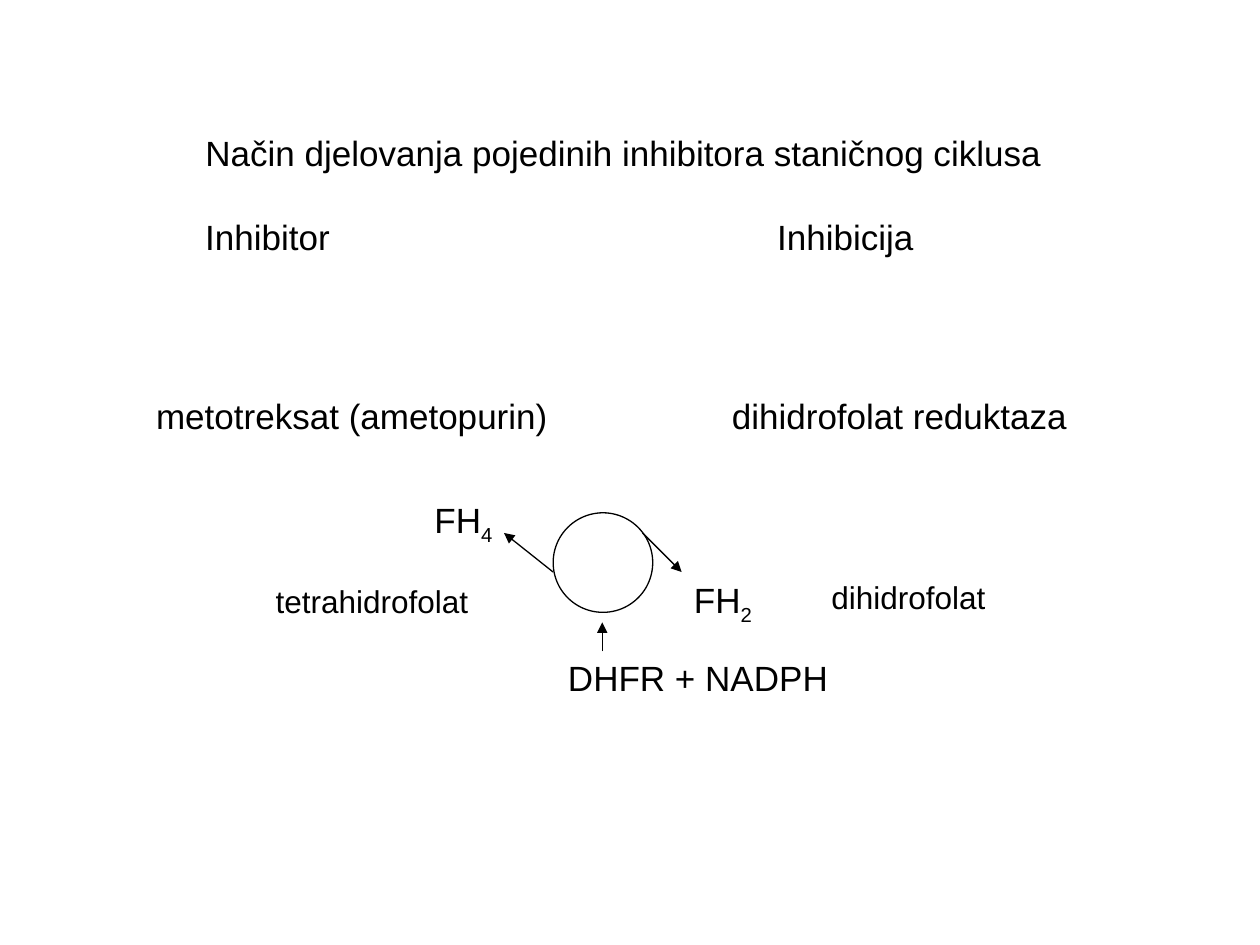
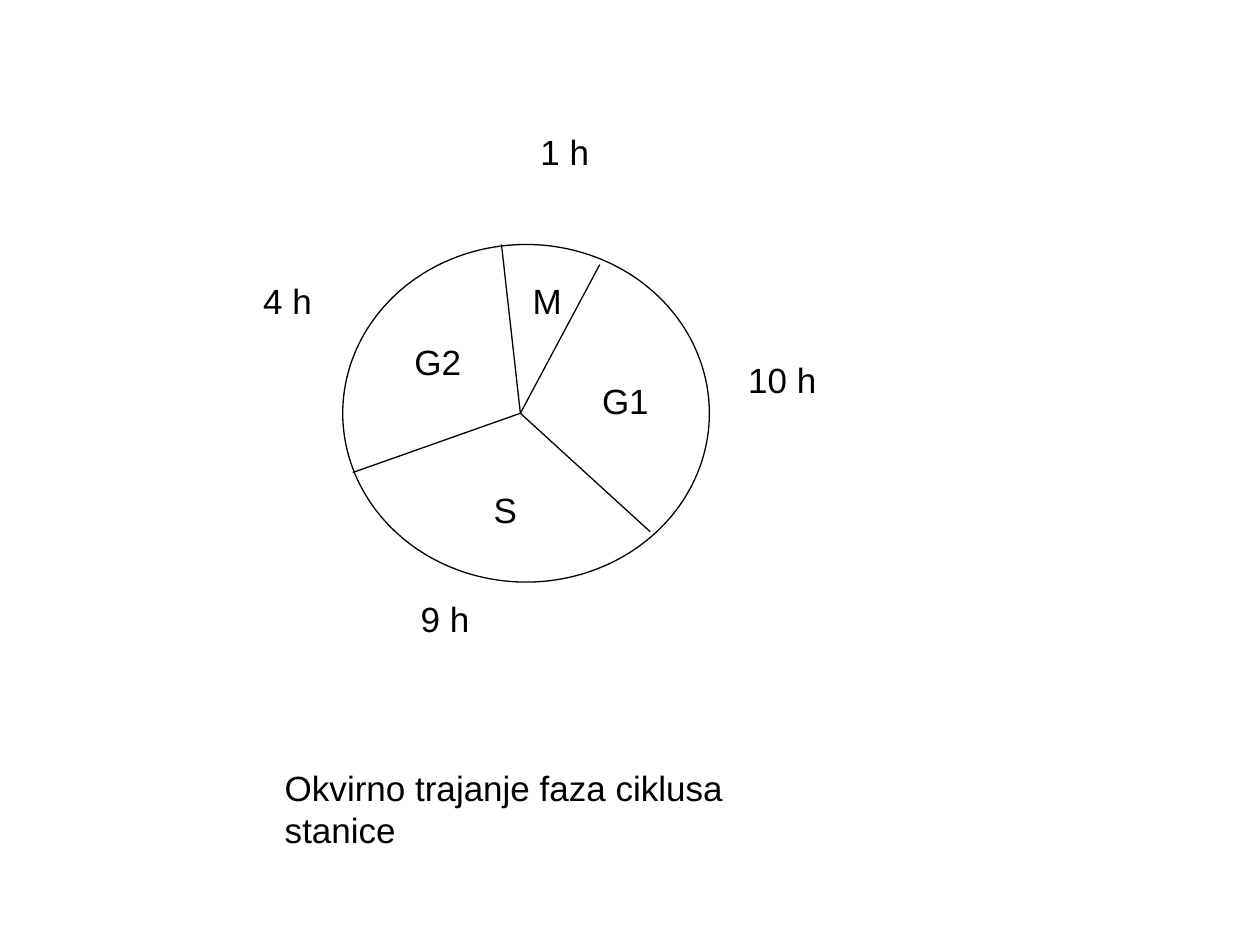
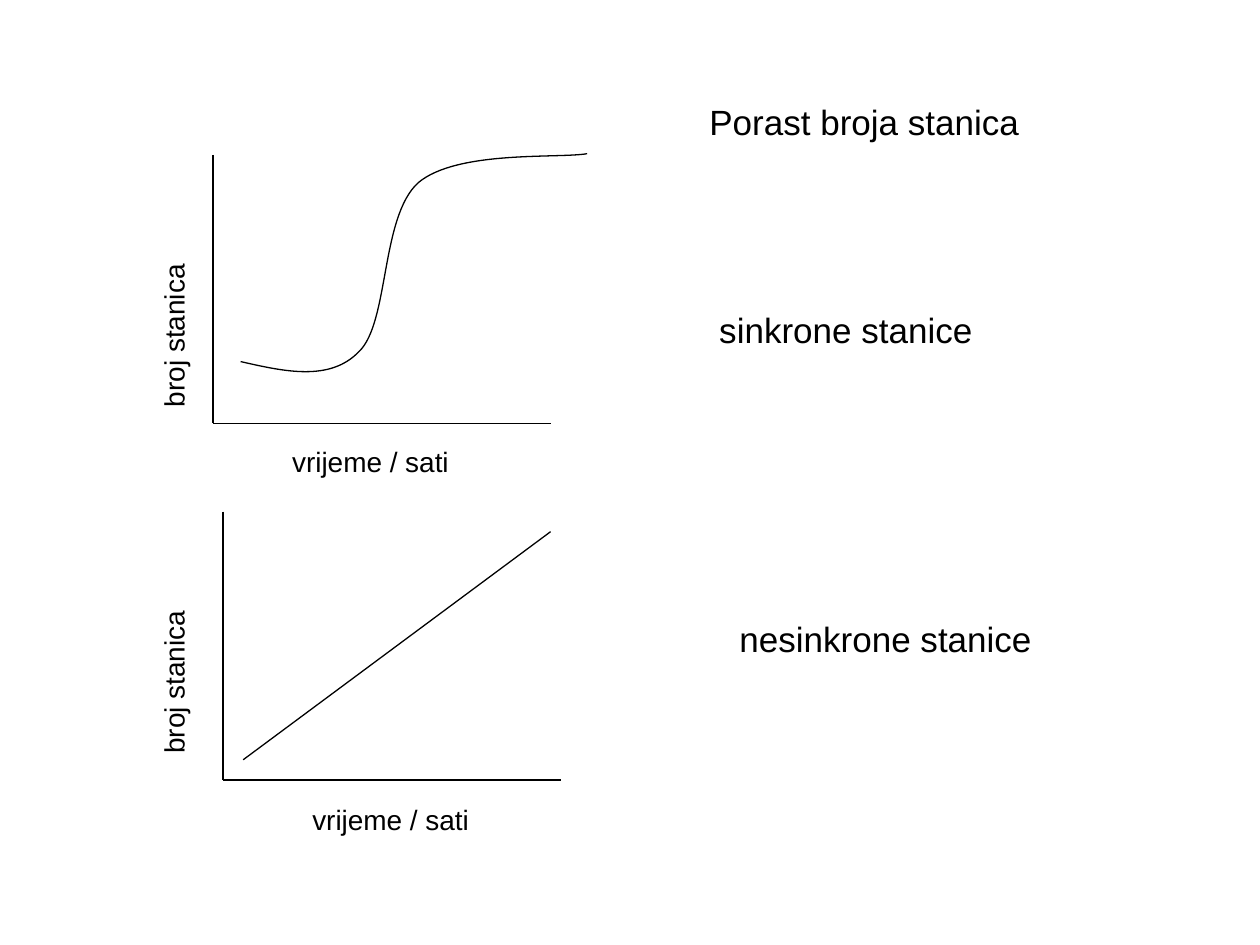
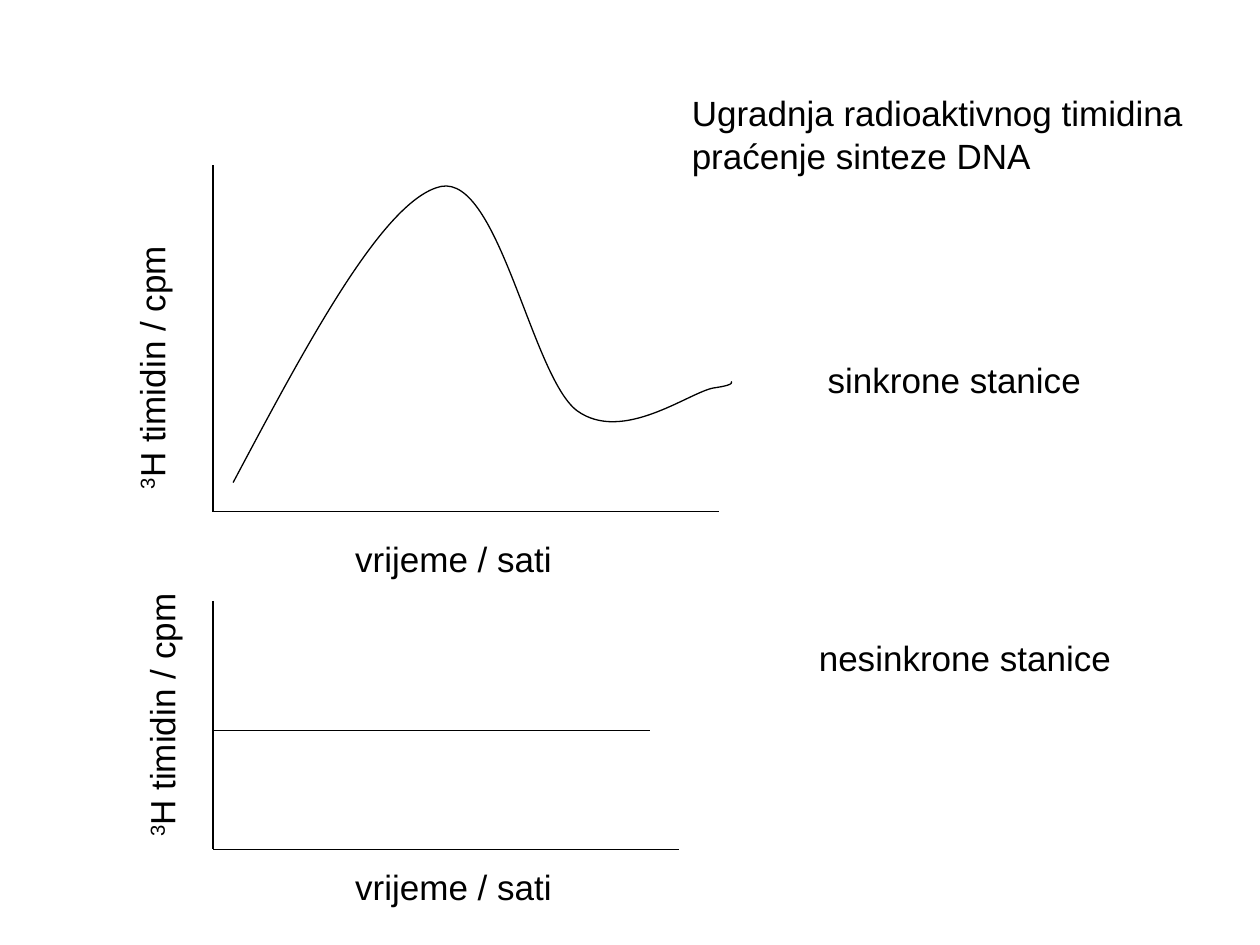
from dataclasses import dataclass

from lxml import etree
from pptx import Presentation
from pptx.dml.color import RGBColor
from pptx.enum.shapes import MSO_CONNECTOR, MSO_SHAPE
from pptx.enum.text import MSO_ANCHOR, MSO_AUTO_SIZE, PP_ALIGN
from pptx.oxml.ns import qn
from pptx.util import Inches, Pt

STRAIGHT = MSO_CONNECTOR.STRAIGHT
OVAL = MSO_SHAPE.OVAL
LEFT = PP_ALIGN.LEFT

SLIDE_W, SLIDE_H = Inches(10), Inches(7.5)
COL, ROW = SLIDE_W / 100, SLIDE_H / 75
TITLE_ONLY = 5
FONT = "Arial"
COLORS = {"ink": "000000", "paper": "FFFFFF"}
LINE_WIDTH = Pt(0.75)
BODY, NOTE, SMALL = 20, 18, 16
TEXT_ROWS = {BODY: 4.3, NOTE: 4, SMALL: 3.7}
FRAME_FORMAT = {"vertical_anchor": MSO_ANCHOR.TOP, "auto_size": MSO_AUTO_SIZE.NONE}
TIMIDIN = [("3", 30), ("H timidin / cpm", 0)]


@dataclass
class Box:
    """A region measured in grid columns and rows."""

    x: float
    y: float
    w: float
    h: float

    def inner(self, x, y, w=0, h=0):
        """Return a box offset from this one's corner."""
        return Box(self.x + x, self.y + y, w, h)

    def point(self, x, y):
        """Return the slide position of a point in this box."""
        return round((self.x + x) * COL), round((self.y + y) * ROW)

    def extent(self):
        """Return left, top, width and height on the slide."""
        return (*self.point(0, 0), round(self.w * COL), round(self.h * ROW))


def color(name):
    """Look up a shared colour."""
    return RGBColor.from_string(COLORS[name])


def write(frame, paragraphs, size=BODY, wrap=False):
    """Fill a frame with paragraphs given as text or (text, baseline) runs."""
    for attribute, value in {**FRAME_FORMAT, "word_wrap": wrap}.items():
        setattr(frame, attribute, value)
    for index, runs in enumerate(paragraphs):
        paragraph = frame.add_paragraph() if index else frame.paragraphs[0]
        paragraph.alignment = LEFT
        for words, baseline in [(runs, 0)] if isinstance(runs, str) else runs:
            run = paragraph.add_run()
            run.text = words
            for attribute, value in {"name": FONT, "size": Pt(size)}.items():
                setattr(run.font, attribute, value)
            run.font.color.rgb = color("ink")
            if baseline:
                run._r.get_or_add_rPr().set("baseline", str(baseline * 1000))


def label(slide, box, runs, size=BODY, wrap=False):
    """Add one line of text whose height follows its size."""
    box.h = TEXT_ROWS[size]
    text = slide.shapes.add_textbox(*box.extent())
    write(text.text_frame, [runs], size, wrap)
    return text


def titled_slide(deck, box, *lines):
    """Add a slide with its title placed in the given box."""
    slide = deck.slides.add_slide(deck.slide_layouts[TITLE_ONLY])
    title = slide.shapes.title
    title.left, title.top, title.width, title.height = box.extent()
    write(title.text_frame, lines, wrap=True)
    return slide


def outline(shape):
    """Apply the shared thin line."""
    shape.line.color.rgb = color("ink")
    shape.line.width = LINE_WIDTH


def line(slide, box, start, end, arrow=False):
    """Draw a line between two points of a box."""
    connector = slide.shapes.add_connector(STRAIGHT, *box.point(*start), *box.point(*end))
    outline(connector)
    if arrow:
        etree.SubElement(connector.line._get_or_add_ln(), qn("a:tailEnd"), type="triangle")
    etree.SubElement(connector._element.spPr, qn("a:effectLst"))


def circle(slide, box):
    """Draw a white ellipse filling a box."""
    oval = slide.shapes.add_shape(OVAL, *box.extent())
    oval.shadow.inherit = False
    oval.fill.solid()
    oval.fill.fore_color.rgb = color("paper")
    outline(oval)


def curve(slide, box, points):
    """Draw a Bézier curve through a start and triples of control points."""
    start, *controls = [box.point(*point) for point in points]
    builder = slide.shapes.build_freeform(*start)
    builder.add_line_segments(controls, close=False)
    trace = builder.convert_to_shape()
    trace.shadow.inherit = False
    trace.fill.background()
    outline(trace)
    path = trace._element.find(".//" + qn("a:path"))
    segments = path.findall(qn("a:lnTo"))
    for first in range(0, len(segments), 3):
        bezier = etree.SubElement(path, qn("a:cubicBezTo"))
        for segment in segments[first:first + 3]:
            bezier.append(segment[0])
            path.remove(segment)


def tabbed_row(slide, box, first, second, stop):
    """Write two columns of text parted by a tab stop."""
    row = label(slide, box, f"{first}\t{second}", wrap=True)
    properties = row.text_frame.paragraphs[0]._p.get_or_add_pPr()
    stops = etree.SubElement(properties, qn("a:tabLst"))
    etree.SubElement(stops, qn("a:tab"), pos=str(round(stop * COL)), algn="l")


def reaction(slide, box):
    """Draw the folate cycle with its enzyme and products."""
    circle(slide, box.inner(23, 1.6, 7.9, 7.9))
    for start, end in (
        ((23, 6.3), (19.1, 3.2)),
        ((30.1, 3.2), (33.2, 6.3)),
        ((26.9, 12.6), (26.9, 10.3)),
    ):
        line(slide, box, start, end, arrow=True)
    for x, y, w, runs, size in (
        (12.6, 0, 6.7, [("FH", 0), ("4", -25)], BODY),
        (33.2, 6.3, 6.7, [("FH", 0), ("2", -25)], BODY),
        (0, 6.6, 17.3, "tetrahidrofolat", NOTE),
        (44.1, 6.3, 14.2, "dihidrofolat", NOTE),
    ):
        label(slide, box.inner(x, y, w), runs, size)
    label(slide, box.inner(23.2, 12.5, 29), "DHFR + NADPH", wrap=True)


def phase_circle(slide, box):
    """Draw the cell cycle split into phases with their durations."""
    circle(slide, box)
    hub = (14.1, 13.4)
    for rim in ((20.4, 1.6), (24.4, 22.8), (0.8, 18.1), (12.6, 0)):
        line(slide, box, hub, rim)
    for x, y, w, words in (
        (19.6, 10.2, 5.7, "G1"),
        (11, 18.9, 3.9, "S"),
        (4.7, 7.1, 5.7, "G2"),
        (14.1, 2.3, 4.3, "M"),
        (31.2, 8.6, 7.4, "10 h"),
        (5.2, 27.5, 5.9, "9 h"),
        (-7.3, 2.3, 5.9, "4 h"),
        (14.7, -9.5, 5.9, "1 h"),
    ):
        label(slide, box.inner(x, y, w), words)


def plot(slide, box, trace, quantity, quantity_at, quantity_w, time_at, time_w, size):
    """Draw two axes, their labels and a trace in a box."""
    corner = (0, box.h)
    line(slide, box, (0, 0), corner)
    line(slide, box, corner, (box.w, box.h))
    if len(trace) == 2:
        line(slide, box, *trace)
    else:
        curve(slide, box, trace)
    x, y = quantity_at
    place = box.inner(x - quantity_w / 2, y - TEXT_ROWS[size] / 2, quantity_w)
    label(slide, place, quantity, size).rotation = 270
    x, gap = time_at
    label(slide, box.inner(x, box.h + gap, time_w), "vrijeme / sati", size)


def synchrony(slide, synchronous, asynchronous):
    """Name the two kinds of cells beside their plots."""
    label(slide, synchronous, "sinkrone stanice")
    label(slide, asynchronous, "nesinkrone stanice")


def inhibitor_slide(deck):
    """Build the slide on inhibitors of the cell cycle."""
    slide = titled_slide(deck, Box(15.3, 9.9, 70.7, 4.3),
                         "Način djelovanja pojedinih inhibitora staničnog ciklusa")
    tabbed_row(slide, Box(15.3, 16.6, 70.7, 0), "Inhibitor", "Inhibicija", 45.4)
    tabbed_row(slide, Box(11.4, 30.8, 81.9, 0),
               "metotreksat (ametopurin)", "dihidrofolat reduktaza", 45.7)
    reaction(slide, Box(20.9, 39.1, 58.3, 16.8))


def duration_slide(deck):
    """Build the slide on how long the phases last."""
    slide = titled_slide(deck, Box(21.6, 60.3, 44, 7.7),
                         "Okvirno trajanje faza ciklusa stanice")
    phase_circle(slide, Box(27.2, 19.4, 29.1, 26.8))


def growth_slide(deck):
    """Build the slide on the growing number of cells."""
    slide = titled_slide(deck, Box(55.3, 7.5, 27.3, 7.7), "Porast broja stanica")
    step = [(2.2, 16.4), (5.7, 17.2), (9.3, 18), (11.6, 15.6), (14, 13.3),
            (13.3, 4.9), (16.3, 2.2), (19.4, -0.4), (27.4, 0.3), (29.7, -0.1)]
    rise = [(1.6, 19.7), (26, 1.6)]
    shared = {"quantity": "broj stanica", "quantity_w": 13.4, "time_w": 14.5, "size": SMALL}
    upper, lower = Box(16.9, 12.3, 26.8, 21.3), Box(17.7, 40.6, 26.8, 21.3)
    plot(slide, upper, step, quantity_at=(-3.1, 14.3), time_at=(5.3, 1.2), **shared)
    plot(slide, lower, rise, quantity_at=(-3.9, 13.5), time_at=(6.1, 1.3), **shared)
    synchrony(slide, upper.inner(39.2, 11.7, 22.1), lower.inner(40, 7.9, 25.2))


def thymidine_slide(deck):
    """Build the slide on thymidine uptake."""
    slide = titled_slide(deck, Box(53.9, 6.8, 41.7, 11),
                         "Ugradnja radioaktivnog timidina", "praćenje sinteze DNA")
    wave = [(1.6, 25.2), (7.6, 13.9), (13.6, 2.7), (18.1, 1.7), (22.7, 0.8),
            (25.3, 16.8), (28.9, 19.5), (32.5, 22.1), (37.7, 18.1), (39.7, 17.7),
            (41.8, 17.4), (40.9, 17.2), (41.2, 17.2)]
    level = [(0, 10.3), (34.7, 10.3)]
    shared = {"quantity": TIMIDIN, "quantity_w": 21.4, "time_w": 17.6, "size": BODY}
    upper, lower = Box(16.9, 13.1, 40.2, 27.5), Box(16.9, 47.7, 37, 19.7)
    plot(slide, upper, wave, quantity_at=(-4.9, 16), time_at=(10.3, 1.6), **shared)
    plot(slide, lower, level, quantity_at=(-4.1, 9), time_at=(10.3, 0.8), **shared)
    synchrony(slide, upper.inner(47.8, 14.9, 22.1), lower.inner(47.1, 2.3, 25.2))


def main():
    """Build and save the four slides."""
    deck = Presentation()
    deck.slide_width, deck.slide_height = SLIDE_W, SLIDE_H
    for build in (inhibitor_slide, duration_slide, growth_slide, thymidine_slide):
        build(deck)
    deck.save("out.pptx")


if __name__ == "__main__":
    main()
